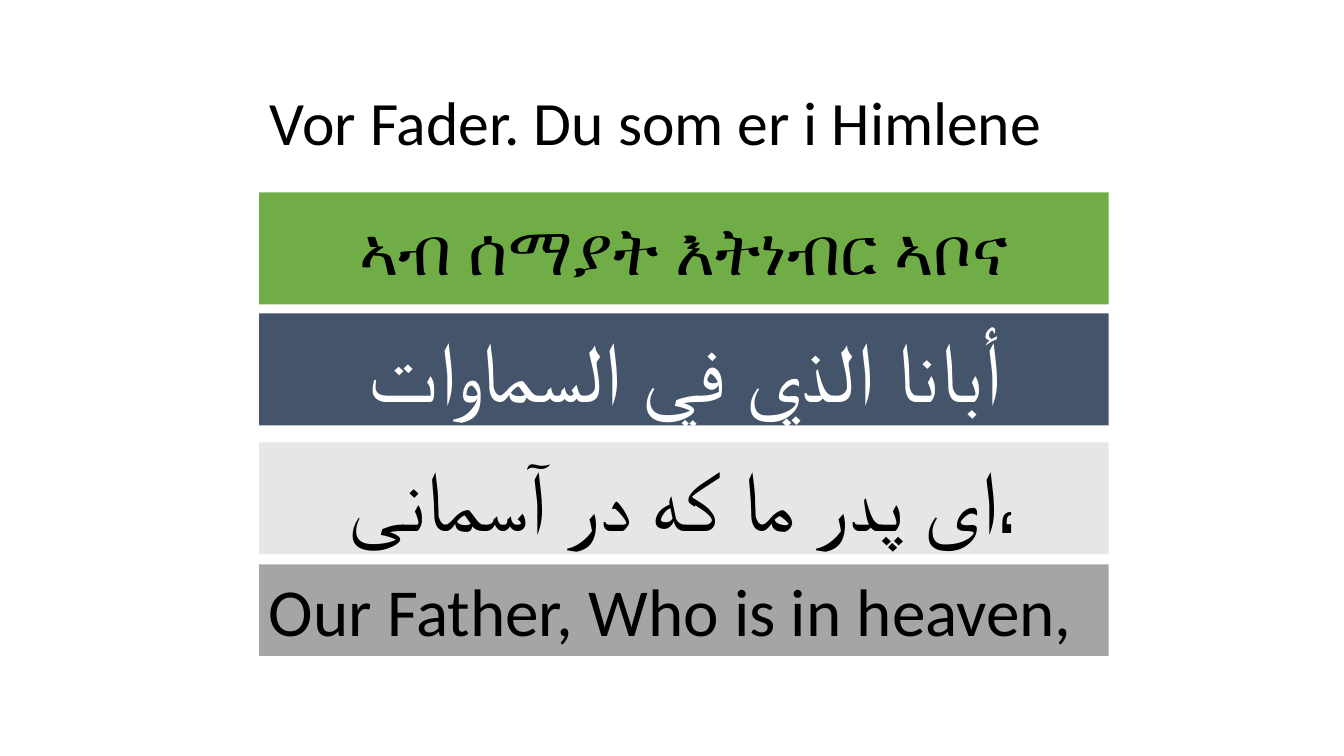
from pptx import Presentation
from pptx.dml.color import RGBColor
from pptx.enum.shapes import MSO_SHAPE
from pptx.enum.text import MSO_ANCHOR, PP_ALIGN
from pptx.util import Cm, Pt

BLACK = RGBColor(0x00, 0x00, 0x00)
WHITE = RGBColor(0xFF, 0xFF, 0xFF)
GREEN = RGBColor(0x70, 0xAD, 0x47)
SLATE = RGBColor(0x44, 0x54, 0x6A)
LIGHT_GREY = RGBColor(0xE7, 0xE6, 0xE6)
GREY = RGBColor(0xA5, 0xA5, 0xA5)

FONT = "Calibri"
BAR_LEFT, BAR_WIDTH = Cm(6.53), Cm(21.41)

# Top and height in cm, fill, text, size, text colour, alignment, anchor
BARS = [
    (4.85, 2.82, GREEN, "ኣብ ሰማያት እትነብር ኣቦና", 48, BLACK,
     PP_ALIGN.CENTER, MSO_ANCHOR.MIDDLE),
    (7.9, 2.82, SLATE, "أبانا الذي في السماوات", 60, WHITE,
     PP_ALIGN.CENTER, MSO_ANCHOR.TOP),
    (11.15, 2.82, LIGHT_GREY, "ای پدر ما که در آسمانی،", 60, BLACK,
     PP_ALIGN.CENTER, MSO_ANCHOR.TOP),
    (14.22, 2.31, GREY, "Our Father, Who is in heaven,", 48, BLACK,
     PP_ALIGN.LEFT, MSO_ANCHOR.TOP),
]


def set_text(sp, text, size, color, align, anchor):
    tf = sp.text_frame
    tf.word_wrap = True
    tf.vertical_anchor = anchor
    p = tf.paragraphs[0]
    p.text = text
    p.alignment = align
    p.font.name = FONT
    p.font.size = Pt(size)
    p.font.color.rgb = color
    return p


def add_title(s, text):
    sp = s.shapes.add_textbox(Cm(5.74), Cm(1.12), Cm(21.59), Cm(4.09))
    p = set_text(sp, text, 44, BLACK, PP_ALIGN.CENTER, MSO_ANCHOR.MIDDLE)
    p.line_spacing = 0.9


def add_bar(s, top, height, fill, *text_style):
    sp = s.shapes.add_shape(MSO_SHAPE.RECTANGLE, BAR_LEFT, Cm(top),
                            BAR_WIDTH, Cm(height))
    sp.shadow.inherit = False
    sp.fill.solid()
    sp.fill.fore_color.rgb = fill
    sp.line.fill.background()
    set_text(sp, *text_style)


def main():
    prs = Presentation()
    prs.slide_width, prs.slide_height = Cm(33.87), Cm(19.05)
    s = prs.slides.add_slide(prs.slide_layouts[6])

    # Danish title line
    add_title(s, "Vor Fader. Du som er i Himlene")

    # One bar for each translation
    for bar in BARS:
        add_bar(s, *bar)

    prs.save("out.pptx")


if __name__ == "__main__":
    main()
